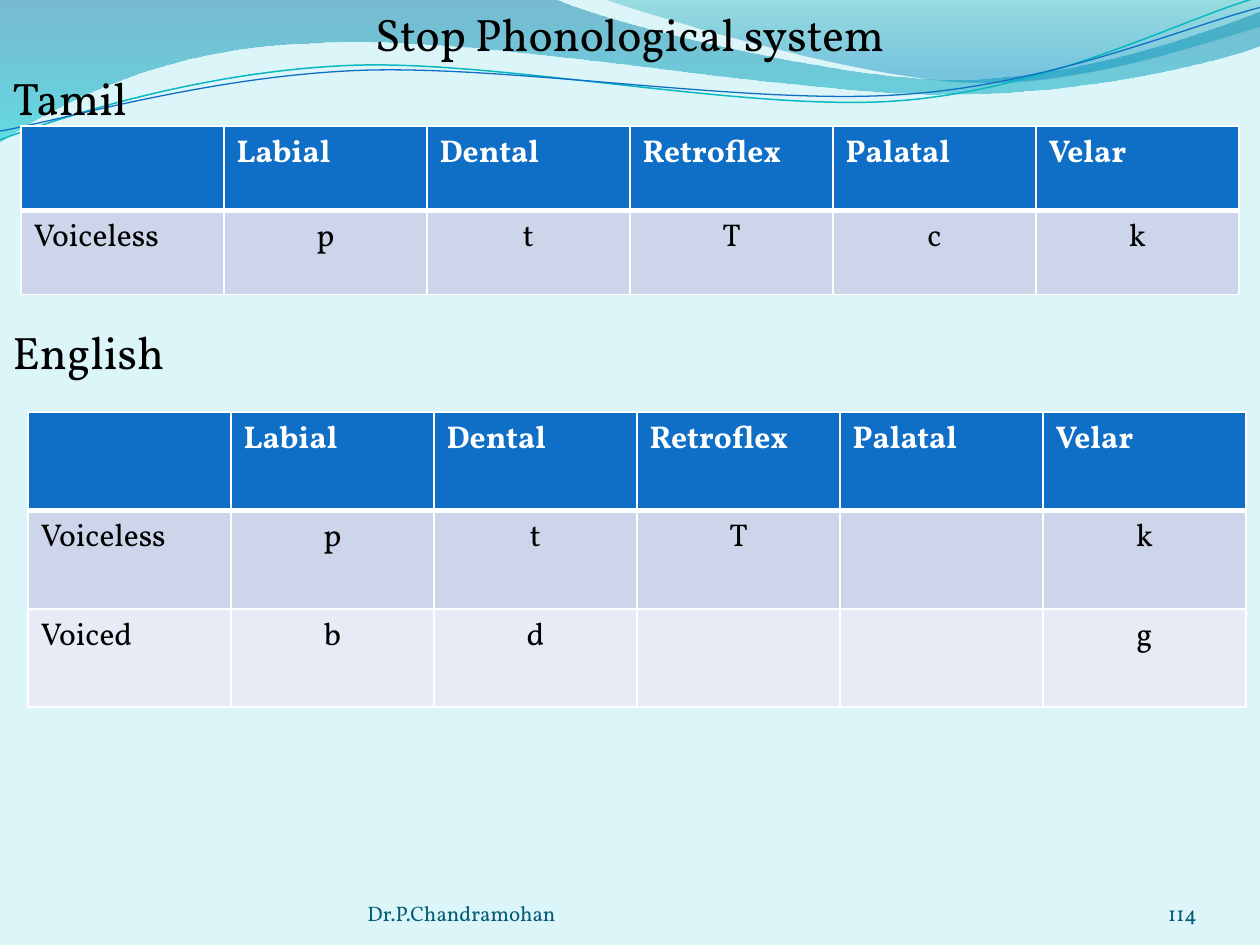
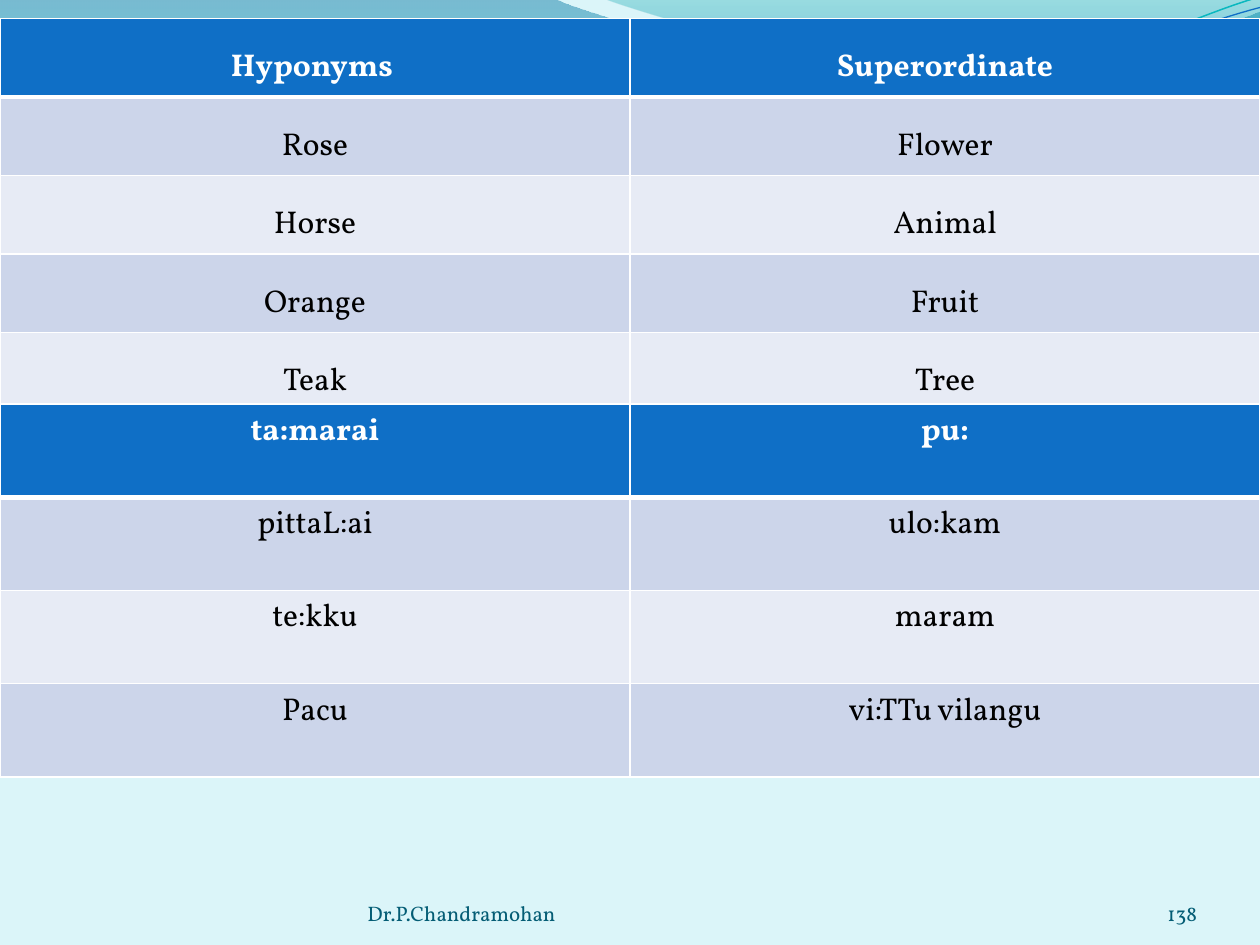
"""Builds two slides of phonology and hyponymy tables on a shared wave background."""
import math
from dataclasses import dataclass

from lxml import etree
from pptx import Presentation
from pptx.dml.color import RGBColor
from pptx.enum import text
from pptx.oxml import ns
from pptx.util import Pt


@dataclass(frozen=True)
class Theme:
    font: str = "Vollkorn"
    background: str = "DBF5F9"
    ink: str = "000000"
    white: str = "FFFFFF"
    header: str = "0F6FC6"
    bands: tuple = ("CCD5EA", "E7EBF5")
    footer: str = "045D75"
    title_size: int = 26
    cell_size: int = 18
    footer_size: int = 12
    border: int = 1
    header_rule: int = 3


THEME = Theme()
LEFT, CENTER, RIGHT = text.PP_ALIGN.LEFT, text.PP_ALIGN.CENTER, text.PP_ALIGN.RIGHT
WIDTH, HEIGHT = 720, 540
LINE_PITCH = 36.4
LANGUAGE_GAP = 113.8
TILT = 2.7
AUTHOR = "Dr.P.Chandramohan"
PLACES = ["", "Labial", "Dental", "Retroflex", "Palatal", "Velar"]

SLIDES = [
    {
        "number": "114",
        "title": "Stop Phonological system",
        "languages": ["Tamil", "English"],
        "tables": [
            {"box": (12, 72, 696, 96.4), "labels_left": True, "rows": [
                PLACES,
                ["Voiceless", "p", "t", "T", "c", "k"]]},
            {"box": (16, 235.4, 696, 168.8), "labels_left": True, "rows": [
                PLACES,
                ["Voiceless", "p", "t", "T", "", "k"],
                ["Voiced", "b", "d", "", "", "g"]]},
        ],
    },
    {
        "number": "138",
        "tables": [
            {"box": (0, 10.6, WIDTH, 181.5), "spacing": 1.5, "rows": [
                ["Hyponyms ", "Superordinate"],
                ["Rose", "Flower"],
                ["Horse", "Animal"],
                ["Orange", "Fruit"],
                ["Teak", "Tree"]]},
            {"box": (0, 231, WIDTH, 213), "rows": [
                ["ta:marai", "pu:"],
                ["pittaL:ai", "ulo:kam"],
                ["te:kku", "maram"],
                ["Pacu", "vi:TTu vilangu"]]},
        ],
    },
]

WAVES = [
    {"start": (0, 0), "stops": [(0, "0074A1", 45), (100, "00C6CF", 55)], "segments": [
        [(316.8, -0.7)],
        [(342.7, 12.2), (478.1, 45.4), (545.8, 45.4)],
        [(614.2, 45.4), (689.8, 18.7), (720, 6.5)],
        [(720.7, 25.9)],
        [(707.8, 31.7), (626.4, 54.7), (537.1, 54)],
        [(447.8, 54), (275, 20.2), (185, 24.5)],
        [(92.9, 25.9), (33.1, 59.8), (-0.7, 81.4)],
        [(0, 0)]]},
    {"start": (344.9, -0.7), "stops": [(0, "00A1A9", 30), (80, "008BBF", 45)], "segments": [
        [(366.5, 7.9), (491, 44.6), (553.7, 46.8)],
        [(616.3, 49.7), (691.9, 23), (720, 15.1)],
        [(720, 0)],
        [(344.9, -0.7)]]},
    {"start": (0, 79.9), "line": ("0AB8BF", 0.85), "center": (359.3, 41.4), "segments": [
        [(34.6, 67), (113.8, 41), (199.4, 37.4)],
        [(284.4, 33.8), (427, 64.1), (513.4, 57.6)],
        [(599.8, 51.1), (675.4, 10.8), (718.6, -1.4)]]},
    {"start": (0, 74.9), "line": ("0F6FC6", 0.75), "center": (359.6, 42.5), "segments": [
        [(33.8, 69.1), (118.1, 43.9), (203.8, 40.3)],
        [(290.2, 36.7), (429.8, 60.5), (516.2, 54)],
        [(601.9, 48.2), (677.5, 15.1), (720, 4.3)]]},
]


def rgb(value):
    return RGBColor.from_string(value)


def add_xml(parent, tag, **attrs):
    return etree.SubElement(parent, ns.qn(tag), {k: str(v) for k, v in attrs.items()})


def add_run(p, words, size, color, bold=False):
    r = p.add_run()
    r.text = words
    r.font.name, r.font.size, r.font.bold = THEME.font, Pt(size), bold
    r.font.color.rgb = rgb(color)


def level(point, center):
    angle = math.radians(TILT)
    dx, dy = point[0] - center[0], point[1] - center[1]
    return (center[0] + dx * math.cos(angle) - dy * math.sin(angle),
            center[1] + dx * math.sin(angle) + dy * math.cos(angle))


def bend(sp, segments):
    vertices = iter(list(sp.element.spPr.iter(ns.qn("a:lnTo"))))
    for segment in segments:
        first, *others = [next(vertices) for _ in segment]
        if others:
            curve = etree.Element(ns.qn("a:cubicBezTo"))
            first.addprevious(curve)
            for vertex in (first, *others):
                curve.append(vertex[0])
                vertex.getparent().remove(vertex)


def gradient(sp, stops):
    spPr = sp.element.spPr
    fill = etree.Element(ns.qn("a:gradFill"), rotWithShape="1")
    gs_list = add_xml(fill, "a:gsLst")
    for position, color, opacity in stops:
        gs = add_xml(gs_list, "a:gs", pos=position * 1000)
        clr = add_xml(gs, "a:srgbClr", val=color)
        add_xml(clr, "a:alpha", val=opacity * 1000)
    add_xml(fill, "a:lin", ang=5400000, scaled=0)
    spPr.replace(spPr.find(ns.qn("a:noFill")), fill)


def add_waves(slide, master):
    for i, wave in enumerate(WAVES):
        filled = "stops" in wave
        points = [wave["start"]] + [pt for segment in wave["segments"] for pt in segment]
        if not filled:
            points = [level(pt, wave["center"]) for pt in points]
        start, *rest = [(Pt(x), Pt(y)) for x, y in points]
        builder = slide.shapes.build_freeform(*start)
        builder.add_line_segments(rest, close=filled)
        sp = builder.convert_to_shape()
        bend(sp, wave["segments"])
        sp.shadow.inherit = False
        sp.fill.background()
        if filled:
            gradient(sp, wave["stops"])
            sp.line.fill.background()
        else:
            color, width = wave["line"]
            sp.line.color.rgb = rgb(color)
            sp.line.width = Pt(width)
            sp.rotation = 360 - TILT
        sp.element.nvSpPr.cNvPr.set("id", str(100 + i))
        master.shapes.element.insert(2 + i, sp.element)


def place(sp, x, y, w, h):
    sp.left, sp.top, sp.width, sp.height = Pt(x), Pt(y), Pt(w), Pt(h)
    tf = sp.text_frame
    tf.auto_size = text.MSO_AUTO_SIZE.NONE
    tf.vertical_anchor = text.MSO_ANCHOR.TOP
    return tf


def add_headings(slide, title, languages):
    p = place(slide.shapes.title, 0, 0, WIDTH, LINE_PITCH + 4).paragraphs[0]
    p.alignment = CENTER
    add_run(p, title, THEME.title_size, THEME.ink)
    tf = place(slide.placeholders[1], 0, LINE_PITCH, WIDTH, 492.8)
    for i, language in enumerate(languages):
        p = tf.add_paragraph() if i else tf.paragraphs[0]
        p.space_before = Pt(LANGUAGE_GAP if i else 0)
        pPr = p._p.get_or_add_pPr()
        pPr.set("marL", "0")
        pPr.set("indent", "0")
        add_xml(pPr, "a:buNone")
        add_run(p, language, THEME.title_size, THEME.ink)


def set_borders(cell, top, bottom):
    tcPr = cell._tc.get_or_add_tcPr()
    widths = {"L": THEME.border, "R": THEME.border, "T": top, "B": bottom}
    for side, width in widths.items():
        ln = add_xml(tcPr, f"a:ln{side}", w=Pt(width))
        add_xml(add_xml(ln, "a:solidFill"), "a:srgbClr", val=THEME.white)


def add_table(slide, box, rows, labels_left=False, spacing=None):
    frame = slide.shapes.add_table(len(rows), len(rows[0]), *(Pt(v) for v in box))
    table = frame.table
    table.horz_banding = False
    for i, row in enumerate(rows):
        head = i == 0
        top = THEME.header_rule if i == 1 else THEME.border
        bottom = THEME.header_rule if head else THEME.border
        for j, words in enumerate(row):
            cell = table.cell(i, j)
            set_borders(cell, top, bottom)
            cell.fill.solid()
            cell.fill.fore_color.rgb = rgb(THEME.header if head else THEME.bands[(i - 1) % 2])
            p = cell.text_frame.paragraphs[0]
            p.alignment = LEFT if labels_left and (head or j == 0) else CENTER
            p.line_spacing = spacing
            if words:
                add_run(p, words, THEME.cell_size, THEME.white if head else THEME.ink, head)


def add_footer(slide, number):
    for words, x, w, align in ((AUTHOR, 210, 264, LEFT), (number, 624, 60, RIGHT)):
        tf = place(slide.shapes.add_textbox(0, 0, 0, 0), x, 500, w, 28.8)
        tf.word_wrap = True
        tf.vertical_anchor = text.MSO_ANCHOR.BOTTOM
        tf.margin_left = tf.margin_right = tf.margin_top = tf.margin_bottom = 0
        p = tf.paragraphs[0]
        p.alignment = align
        add_run(p, words, THEME.footer_size, THEME.footer)


def main():
    prs = Presentation()
    prs.slide_width, prs.slide_height = Pt(WIDTH), Pt(HEIGHT)
    master = prs.slide_master
    master.background.fill.solid()
    master.background.fill.fore_color.rgb = rgb(THEME.background)
    for content in SLIDES:
        titled = "title" in content
        slide = prs.slides.add_slide(prs.slide_layouts[1 if titled else 6])
        if titled:
            add_headings(slide, content["title"], content["languages"])
        add_footer(slide, content["number"])
        for table in content["tables"]:
            add_table(slide, **table)
    add_waves(prs.slides[0], master)
    prs.save("out.pptx")


if __name__ == "__main__":
    main()
